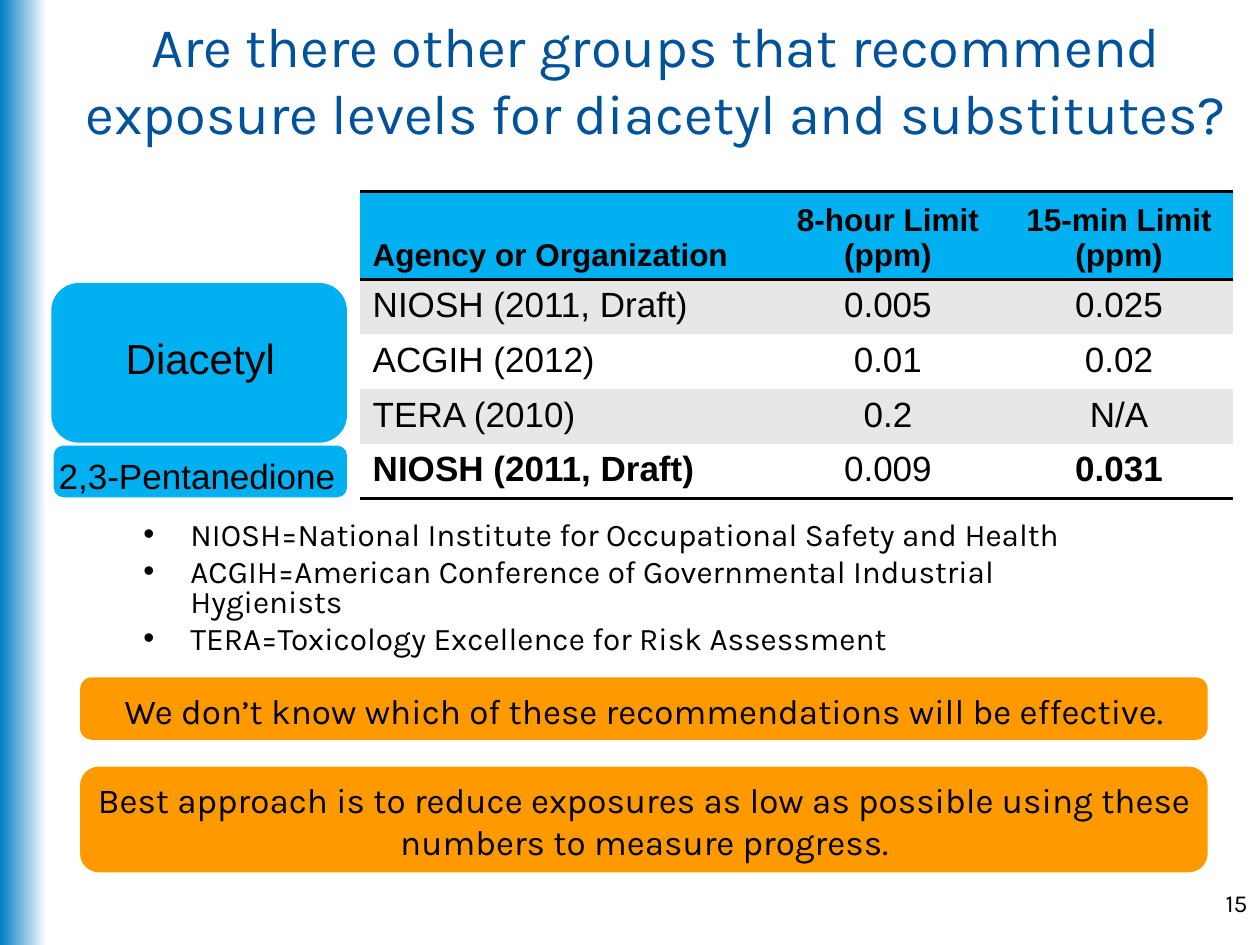
"""Slide comparing recommended exposure limits for diacetyl and its substitutes."""
from lxml.etree import SubElement
from pptx import Presentation
from pptx.dml.color import RGBColor
from pptx.enum.shapes import MSO_SHAPE
from pptx.enum.text import MSO_ANCHOR, PP_ALIGN
from pptx.oxml import parse_xml
from pptx.oxml.ns import nsdecls, qn
from pptx.util import Cm, Pt

BLACK = RGBColor(0x00, 0x00, 0x00)
WHITE = RGBColor(0xFF, 0xFF, 0xFF)
GREY = RGBColor(0xE7, 0xE7, 0xE7)
BAND_BLUE = RGBColor(0x00, 0x7D, 0xC3)
TITLE_BLUE = RGBColor(0x00, 0x53, 0x9B)
SKY = RGBColor(0x00, 0xB0, 0xF0)
ORANGE = RGBColor(0xFF, 0x99, 0x00)
NO_STYLE = "{2D5ABB26-0587-4C30-8999-92F81FD0307C}"


def write(para, text, size, font="Karla", color=BLACK, align=PP_ALIGN.CENTER, bold=False):
    para.alignment = align
    span = para.add_run()
    span.text = text
    span.font.name = font
    span.font.size = Pt(size)
    span.font.bold = bold
    span.font.color.rgb = color


def add_text_frame(left, top, width, height):
    box = page.shapes.add_textbox(Cm(left), Cm(top), Cm(width), Cm(height))
    box.text_frame.word_wrap = True
    return box.text_frame


deck = Presentation()
deck.slide_width, deck.slide_height = Cm(25.4), Cm(19.05)
page = deck.slides.add_slide(deck.slide_layouts[6])

band = page.shapes.add_shape(MSO_SHAPE.RECTANGLE, 0, 0, Cm(0.94), deck.slide_height)
band.shadow.inherit = False
band.line.fill.background()
band.fill.gradient()
band.fill.gradient_angle = 0
for stop, color in zip(band.fill.gradient_stops, (BAND_BLUE, WHITE)):
    stop.color.rgb = color

title = add_text_frame(1.07, 0, 24.33, 3.18)
title.vertical_anchor = MSO_ANCHOR.MIDDLE
write(title.paragraphs[0],
      "Are there other groups that recommend exposure levels for diacetyl and substitutes?",
      32, color=TITLE_BLUE)

definitions = (
    "NIOSH=National Institute for Occupational Safety and Health",
    "ACGIH=American Conference of Governmental Industrial Hygienists",
    "TERA=Toxicology Excellence for Risk Assessment",
)
glossary = add_text_frame(2.64, 10.41, 20.7, 3.18)
for index, definition in enumerate(definitions):
    para = glossary.add_paragraph() if index else glossary.paragraphs[0]
    write(para, definition, 18, align=PP_ALIGN.LEFT)
    para.line_spacing = 0.8
    para.space_before = Pt(3.6)
    properties = para._p.get_or_add_pPr()
    properties.set("marL", str(Cm(0.95)))
    properties.set("indent", str(-Cm(0.95)))
    SubElement(properties, qn("a:buFont")).set("typeface", "Arial")
    SubElement(properties, qn("a:buChar")).set("char", "•")

page_number = add_text_frame(20.12, 17.78, 5.28, 1.27)
write(page_number.paragraphs[0], "15", 14, align=PP_ALIGN.RIGHT)

rows = (
    ("Agency or Organization", "8-hour Limit\n(ppm)", "15-min Limit\n(ppm)"),
    ("NIOSH (2011, Draft)", "0.005", "0.025"),
    ("ACGIH (2012)", "0.01", "0.02"),
    ("TERA (2010)", "0.2", "N/A"),
    ("NIOSH (2011, Draft)", "0.009", "0.031"),
)
bold_cells = {(0, 0), (0, 1), (0, 2), (4, 0), (4, 2)}
row_borders = {0: ("lnB", "lnT"), 4: ("lnB",)}
widths = (8.28, 4.72, 4.6)
heights = (1.65, 1.08, 1.08, 1.08, 1.08)
limits = page.shapes.add_table(len(rows), len(widths), Cm(7.26), Cm(3.86),
                               Cm(sum(widths)), Cm(sum(heights))).table
limits.first_row = limits.horz_banding = False
limits._tbl.tblPr.find(qn("a:tableStyleId")).text = NO_STYLE
for column, width in zip(limits.columns, widths):
    column.width = Cm(width)
for r, (values, height) in enumerate(zip(rows, heights)):
    limits.rows[r].height = Cm(height)
    for c, value in enumerate(values):
        cell = limits.cell(r, c)
        cell.vertical_anchor = MSO_ANCHOR.TOP if r else MSO_ANCHOR.BOTTOM
        cell.fill.solid()
        cell.fill.fore_color.rgb = SKY if r == 0 else GREY if r % 2 else WHITE
        for side in row_borders.get(r, ()):
            cell._tc.get_or_add_tcPr().insert(0, parse_xml(
                f'<a:{side} {nsdecls("a")} w="{Pt(2)}"><a:solidFill>'
                f'<a:srgbClr val="{BLACK}"/></a:solidFill></a:{side}>'))
        for index, line in enumerate(value.split("\n")):
            para = cell.text_frame.add_paragraph() if index else cell.text_frame.paragraphs[0]
            write(para, line, 20 if r else 18, "Arial",
                  align=PP_ALIGN.CENTER if c else PP_ALIGN.LEFT, bold=(r, c) in bold_cells)

labels = (
    ((1.65, 13.69, 22.66, 1.19), (1.35, 13.77, 23.29, 1.12), ORANGE, "Karla", 20,
     "We don’t know which of these recommendations will be effective."),
    ((1.65, 15.49, 22.66, 2.06), (1.35, 15.57, 23.29, 1.96), ORANGE, "Karla", 20,
     "Best approach is to reduce exposures as low as possible using these numbers "
     "to measure progress."),
    ((1.07, 5.74, 5.89, 3.15), (1.35, 6.58, 5.38, 1.27), SKY, "Arial", 24, "Diacetyl"),
    ((1.12, 9.02, 5.84, 0.97), (0.89, 9.04, 6.17, 1.12), SKY, "Arial", 20, "2,3-Pentanedione"),
)
for panel_place, text_place, color, font, size, text in labels:
    panel = page.shapes.add_shape(MSO_SHAPE.ROUNDED_RECTANGLE, *map(Cm, panel_place))
    panel.shadow.inherit = False
    panel.fill.solid()
    panel.fill.fore_color.rgb = color
    panel.line.color.rgb = color
    panel.line.width = Pt(2)
    write(add_text_frame(*text_place).paragraphs[0], text, size, font)

deck.save("out.pptx")
